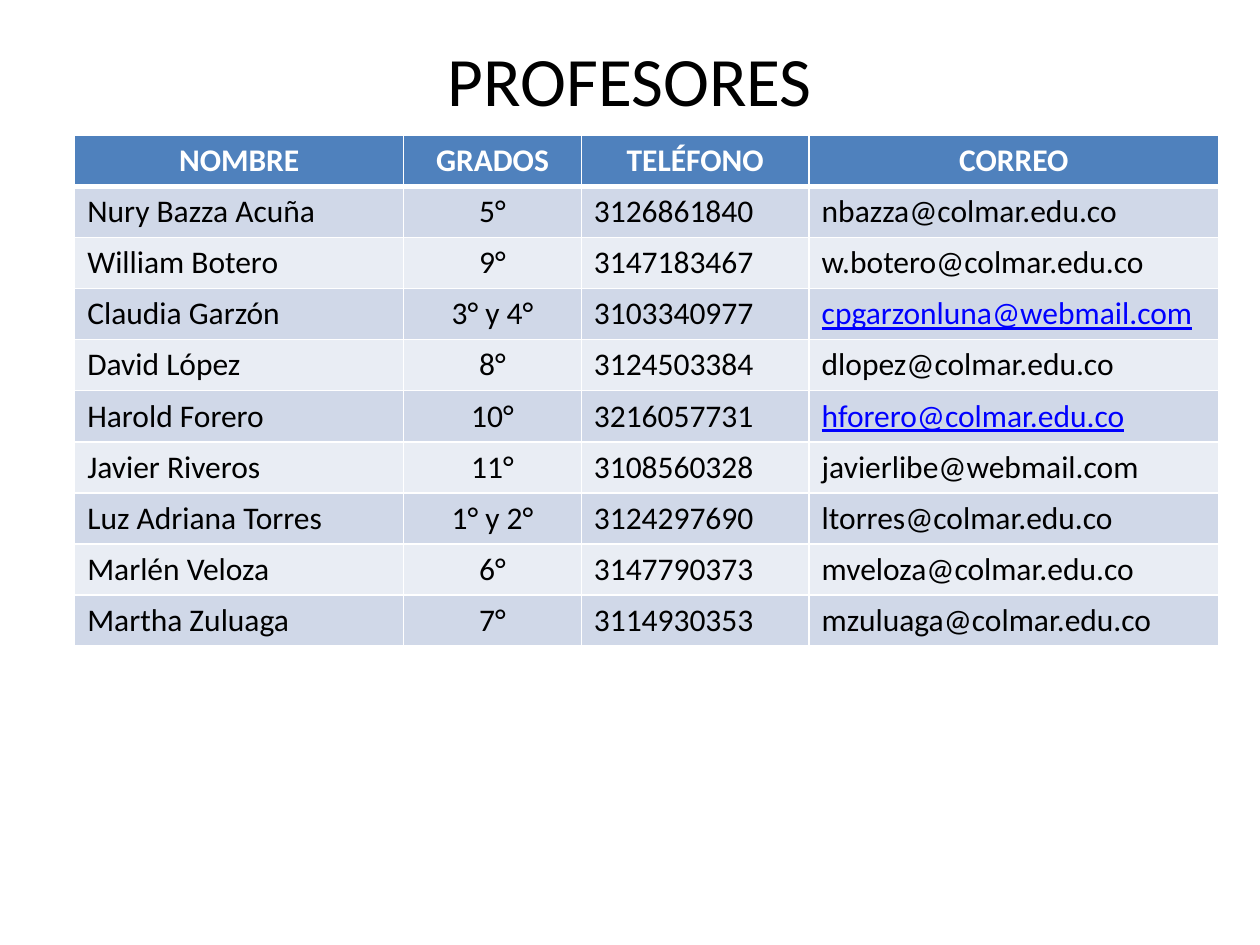
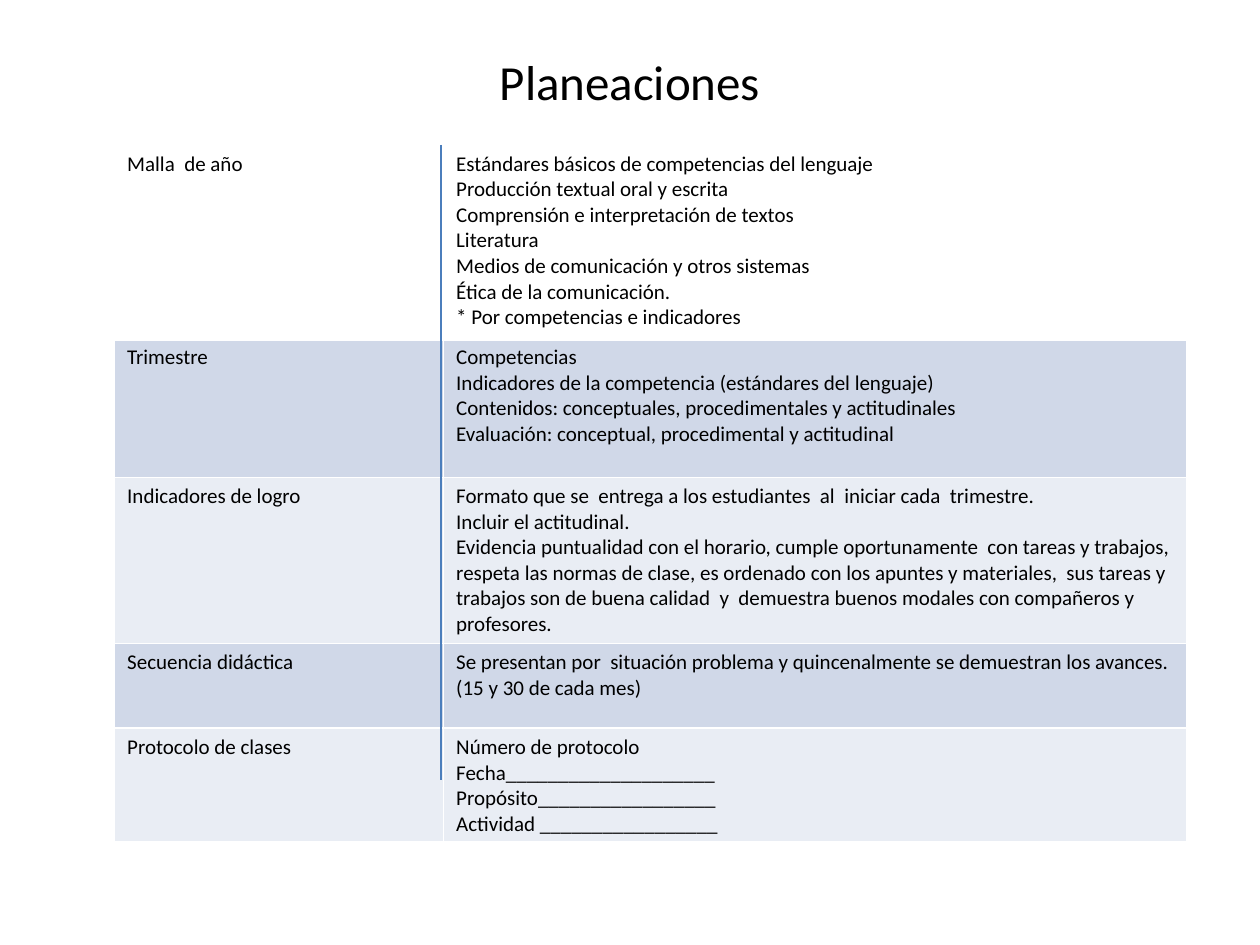
from lxml import etree
from pptx import Presentation
from pptx.dml.color import RGBColor as RGB
from pptx.enum.shapes import MSO_CONNECTOR as CONN
from pptx.enum.text import MSO_ANCHOR as ANCHOR, PP_ALIGN as ALIGN
from pptx.oxml.ns import qn
from pptx.util import Pt

COLORS = {
    "text": "000000", "white": "FFFFFF", "header": "4F81BD",
    "band_dark": "D0D8E8", "band_light": "E9EDF4",
    "link": "0000FF", "divider": "4B7EBC",
}
FONT = "Calibri"
SCHOOL, WEBMAIL = "colmar.edu.co", "webmail.com"

TEACHER_HEADS = ["NOMBRE", "GRADOS", "TELÉFONO", "CORREO"]
TEACHERS = [
    ["Nury Bazza Acuña", "5°", "3126861840", f"nbazza@{SCHOOL}"],
    ["William Botero", "9°", "3147183467", f"w.botero@{SCHOOL}"],
    ["Claudia Garzón", "3° y 4°", "3103340977", f"cpgarzonluna@{WEBMAIL}"],
    ["David López", "8°", "3124503384", f"dlopez@{SCHOOL}"],
    ["Harold Forero", "10°", "3216057731", f"hforero@{SCHOOL}"],
    ["Javier Riveros", "11°", "3108560328", f"javierlibe@{WEBMAIL}"],
    ["Luz Adriana Torres", "1° y 2°", "3124297690", f"ltorres@{SCHOOL}"],
    ["Marlén Veloza", "6°", "3147790373", f"mveloza@{SCHOOL}"],
    ["Martha Zuluaga", "7°", "3114930353", f"mzuluaga@{SCHOOL}"],
]
LINKED_ROWS = (3, 5)

PLANS = [
    ("Malla  de año", [
        "Estándares básicos de competencias del lenguaje",
        "Producción textual oral y escrita",
        "Comprensión e interpretación de textos",
        "Literatura",
        "Medios de comunicación y otros sistemas",
        "Ética de la comunicación.",
        "* Por competencias e indicadores"]),
    ("Trimestre", [
        "Competencias",
        "Indicadores de la competencia (estándares del lenguaje)",
        "Contenidos: conceptuales, procedimentales y actitudinales",
        "Evaluación: conceptual, procedimental y actitudinal"]),
    ("Indicadores de logro", [
        "Formato que se  entrega a los estudiantes  al  iniciar cada  trimestre.",
        "Incluir el actitudinal.",
        "Evidencia puntualidad con el horario, cumple oportunamente  con tareas y "
        "trabajos, respeta las normas de clase, es ordenado con los apuntes y "
        "materiales,  sus tareas y trabajos son de buena calidad  y  demuestra "
        "buenos modales con compañeros y profesores."]),
    ("Secuencia didáctica", [
        "Se presentan por  situación problema y quincenalmente se demuestran los "
        "avances. (15 y 30 de cada mes)"]),
    ("Protocolo de clases", [
        "Número de protocolo",
        "Fecha" + "_" * 20,
        "Propósito" + "_" * 17,
        "Actividad " + "_" * 17]),
]


class Deck:
    def __init__(self):
        self.prs = Presentation()
        self.prs.slide_width, self.prs.slide_height = Pt(720), Pt(540)
        self.s = None

    def new_slide(self):
        self.s = self.prs.slides.add_slide(self.prs.slide_layouts[6])

    def add_text(self, tf, lines, size, color="text", bold=False, underline=False,
                 align=ALIGN.LEFT):
        for i, line in enumerate(lines):
            p = tf.paragraphs[0] if i == 0 else tf.add_paragraph()
            p.alignment = align
            r = p.add_run()
            r.text = line
            r.font.name, r.font.size = FONT, Pt(size)
            r.font.bold, r.font.underline = bold, underline
            r.font.color.rgb = RGB.from_string(COLORS[color])

    def title(self, text, size, height, bottom_inset=3.6):
        sp = self.s.shapes.add_textbox(Pt(36), Pt(21.6), Pt(648), Pt(height))
        tf = sp.text_frame
        tf.word_wrap = True
        tf.vertical_anchor = ANCHOR.MIDDLE
        tf.margin_bottom = Pt(bottom_inset)
        self.add_text(tf, [text], size, align=ALIGN.CENTER)

    def table(self, left, top, widths, heights, head_fill):
        """Add an empty table with a head row, banded rows and white rules."""
        tbl = self.s.shapes.add_table(
            len(heights), len(widths), Pt(left), Pt(top),
            Pt(sum(widths)), Pt(sum(heights))).table
        for col, width in zip(tbl.columns, widths):
            col.width = Pt(width)
        for i, (row, height) in enumerate(zip(tbl.rows, heights)):
            row.height = Pt(height)
            band = "band_dark" if i % 2 else "band_light"
            for cell in row.cells:
                cell.fill.solid()
                cell.fill.fore_color.rgb = RGB.from_string(
                    COLORS[band if i else head_fill])
                self.borders(cell, top=3 if i == 1 else 1,
                             bottom=3 if i == 0 else 1)
        return tbl

    def borders(self, cell, top, bottom):
        tc_pr = cell._tc.get_or_add_tcPr()
        sides = {"lnL": 1, "lnR": 1, "lnT": top, "lnB": bottom}
        for i, (side, width) in enumerate(sides.items()):
            ln = etree.Element(qn(f"a:{side}"), w=str(Pt(width)))
            fill = etree.SubElement(ln, qn("a:solidFill"))
            etree.SubElement(fill, qn("a:srgbClr"), val=COLORS["white"])
            tc_pr.insert(i, ln)

    def vertical_line(self, x, y1, y2):
        cn = self.s.shapes.add_connector(CONN.STRAIGHT, Pt(x), Pt(y1), Pt(x), Pt(y2))
        cn.line.color.rgb = RGB.from_string(COLORS["divider"])
        cn.line.width = Pt(0.75)
        etree.SubElement(cn._element.spPr, qn("a:effectLst"))


def teachers_slide(deck):
    deck.new_slide()
    deck.title("PROFESORES", 39.6, height=90, bottom_inset=47)
    rows = [TEACHER_HEADS] + TEACHERS
    tbl = deck.table(42.7, 77.3, [188, 101.5, 130.2, 234], [29.2] * len(rows), "header")
    for i, row in enumerate(rows):
        for j, text in enumerate(row):
            linked = j == 3 and i in LINKED_ROWS
            color = "white" if i == 0 else "link" if linked else "text"
            align = ALIGN.CENTER if i == 0 or j == 1 else ALIGN.LEFT
            deck.add_text(tbl.cell(i, j).text_frame, [text], 18, color,
                          bold=i == 0, underline=linked, align=align)


def plans_slide(deck):
    deck.new_slide()
    deck.title("Planeaciones", 28, height=49.7)
    tbl = deck.table(65.5, 82.8, [188, 424.5], [110.5, 79.5, 94.9, 48.5, 65], "white")
    for i, (stage, details) in enumerate(PLANS):
        deck.add_text(tbl.cell(i, 0).text_frame, [stage], 12)
        deck.add_text(tbl.cell(i, 1).text_frame, details, 12)
    deck.vertical_line(252, 82.8, 190.8)
    deck.vertical_line(252, 190.8, 445.7)


def main():
    deck = Deck()
    teachers_slide(deck)
    plans_slide(deck)
    deck.prs.save("out.pptx")


if __name__ == "__main__":
    main()
